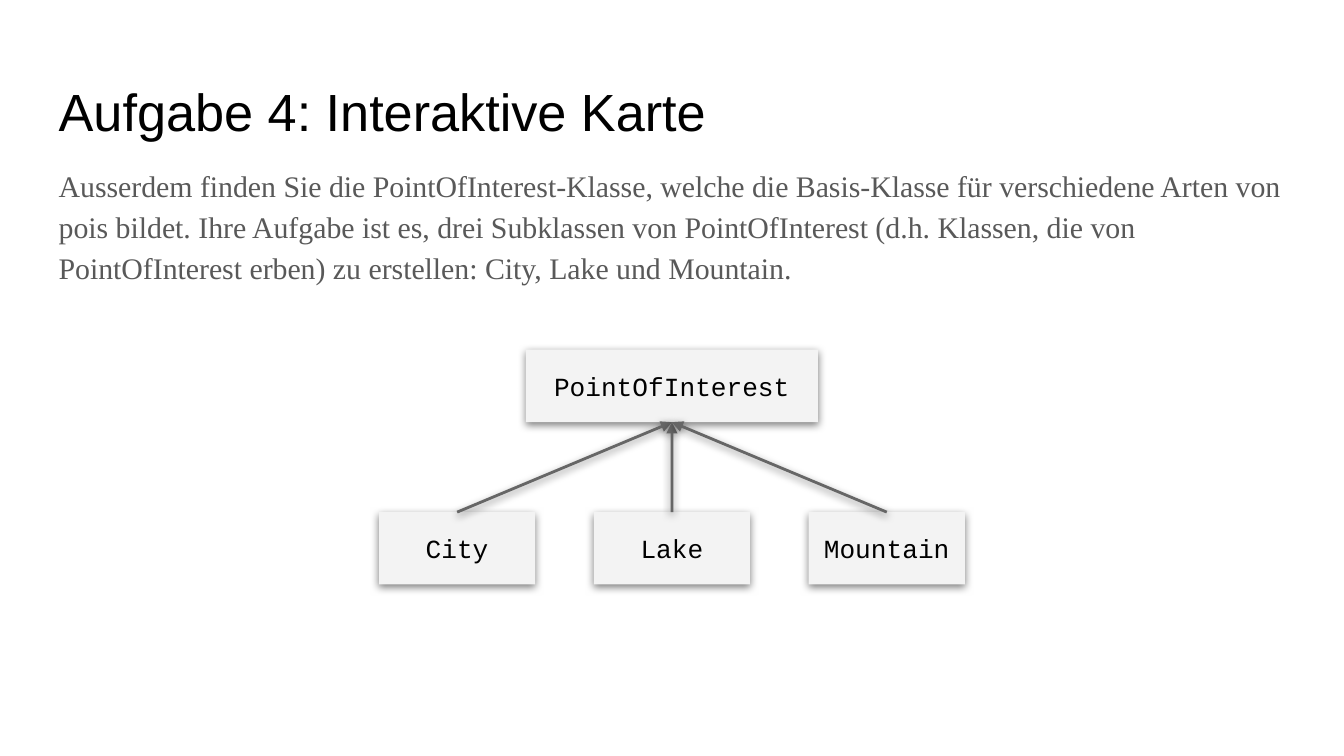
from dataclasses import dataclass

from lxml import etree
from pptx import Presentation
from pptx.dml.color import RGBColor
from pptx.enum.shapes import MSO_CONNECTOR, MSO_SHAPE
from pptx.enum.text import MSO_ANCHOR, MSO_AUTO_SIZE, PP_ALIGN
from pptx.oxml.ns import qn
from pptx.util import Cm, Pt

RECTANGLE = MSO_SHAPE.RECTANGLE
STRAIGHT = MSO_CONNECTOR.STRAIGHT
TOP, MIDDLE = MSO_ANCHOR.TOP, MSO_ANCHOR.MIDDLE
LEFT, CENTER = PP_ALIGN.LEFT, PP_ALIGN.CENTER
TITLE_ONLY = 5
TOP_SIDE, BOTTOM_SIDE = 0, 2


@dataclass(frozen=True)
class Theme:
    black: str = "000000"
    body: str = "595959"
    box: str = "F3F3F3"
    line: str = "666666"
    title_size: int = 28
    body_size: int = 16
    class_size: int = 14
    title_font: str = "Arial"
    body_font: str = "Times New Roman"
    class_font: str = "Courier New"


theme = Theme()


def write(shape, text, font, size, color, align, anchor):
    frame = shape.text_frame
    frame.text = text
    frame.word_wrap = True
    frame.auto_size = MSO_AUTO_SIZE.NONE
    frame.vertical_anchor = anchor
    frame.margin_left = frame.margin_right = Cm(0.25)
    frame.margin_top = frame.margin_bottom = Cm(0.25)
    para = frame.paragraphs[0]
    para.alignment = align
    para.line_spacing = 1.0
    span = para.runs[0]
    span.font.name = font
    span.font.size = Pt(size)
    span.font.color.rgb = RGBColor.from_string(color)
    return para


def add_shadow(shape):
    effects = etree.SubElement(shape._element.spPr, qn("a:effectLst"))
    shadow = etree.SubElement(effects, qn("a:outerShdw"), blurRad=str(Pt(4.5)),
                              dist=str(Pt(1.5)), dir="5400000",
                              algn="bl", rotWithShape="0")
    color = etree.SubElement(shadow, qn("a:srgbClr"), val=theme.black)
    etree.SubElement(color, qn("a:alpha"), val="50000")


deck = Presentation()
deck.slide_width, deck.slide_height = Cm(25.4), Cm(14.29)
page = deck.slides.add_slide(deck.slide_layouts[TITLE_ONLY])

# Title
title = page.shapes.title
title.left, title.top, title.width, title.height = Cm(0.86), Cm(1.24), Cm(23.67), Cm(1.6)
write(title, "Aufgabe 4: Interaktive Karte", theme.title_font, theme.title_size,
      theme.black, LEFT, TOP)

# Task description
task = page.shapes.add_textbox(Cm(0.86), Cm(2.82), Cm(23.67), Cm(3.07))
para = write(
    task,
    "Ausserdem finden Sie die PointOfInterest-Klasse, welche die Basis-Klasse für "
    "verschiedene Arten von pois bildet. Ihre Aufgabe ist es, drei Subklassen von "
    "PointOfInterest (d.h. Klassen, die von PointOfInterest erben) zu erstellen: "
    "City, Lake und Mountain.",
    theme.body_font, theme.body_size, theme.body, LEFT, TOP)
para.line_spacing = 1.15

# Class boxes: name, centre, top, width; subclasses sit evenly below the base
middle, pitch = 12.7, 4.06
classes = [("PointOfInterest", middle, 6.61, 5.52)]
for index, name in enumerate(["City", "Lake", "Mountain"]):
    classes.append((name, middle + (index - 1) * pitch, 9.68, 2.95))

boxes = []
for name, center, top, width in classes:
    box = page.shapes.add_shape(RECTANGLE, Cm(center - width / 2), Cm(top),
                                Cm(width), Cm(1.37))
    box.fill.solid()
    box.fill.fore_color.rgb = RGBColor.from_string(theme.box)
    box.line.fill.background()
    add_shadow(box)
    write(box, name, theme.class_font, theme.class_size, theme.black, CENTER, MIDDLE)
    boxes.append(box)

# Inheritance arrows from each subclass to the base class
base, *subclasses = boxes
for subclass in subclasses:
    arrow = page.shapes.add_connector(STRAIGHT, 0, 0, 0, 0)
    arrow.begin_connect(subclass, TOP_SIDE)
    arrow.end_connect(base, BOTTOM_SIDE)
    arrow.line.color.rgb = RGBColor.from_string(theme.line)
    arrow.line.width = Pt(1.5)
    etree.SubElement(arrow.line._get_or_add_ln(), qn("a:tailEnd"), type="triangle")
    add_shadow(arrow)

deck.save("out.pptx")
